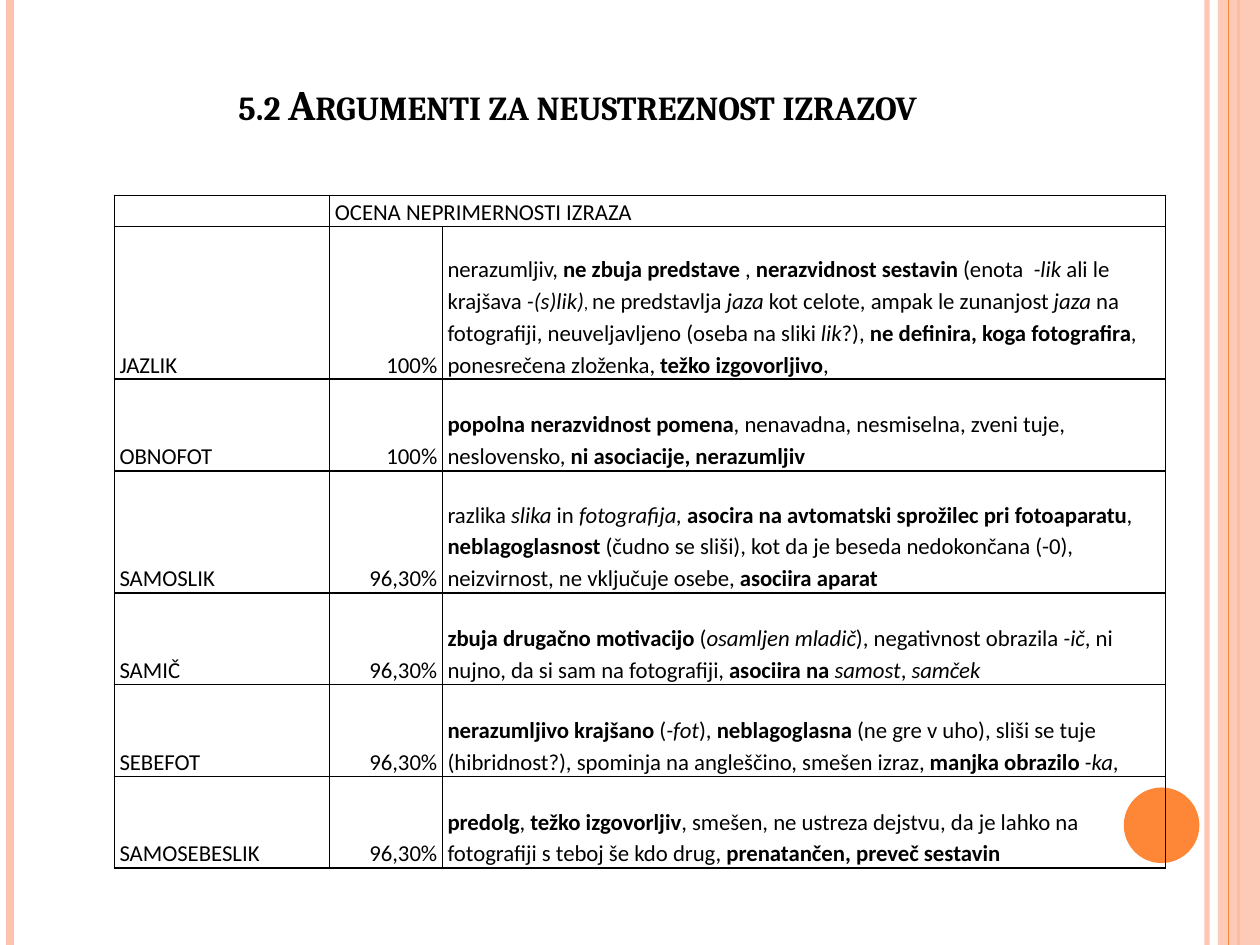
"""Build the slide on arguments against the coined terms."""
from dataclasses import dataclass

from lxml import etree
from pptx import Presentation
from pptx.dml.color import RGBColor
from pptx.enum.shapes import MSO_CONNECTOR, MSO_SHAPE
from pptx.enum.text import MSO_ANCHOR, PP_ALIGN
from pptx.oxml.ns import qn
from pptx.util import Pt

LINE = MSO_CONNECTOR.STRAIGHT
RECT, OVAL = MSO_SHAPE.RECTANGLE, MSO_SHAPE.OVAL
BOTTOM = MSO_ANCHOR.BOTTOM
LEFT, RIGHT, CENTER = PP_ALIGN.LEFT, PP_ALIGN.RIGHT, PP_ALIGN.CENTER
WIDE, HIGH = 720, 540
MARKS = "*_~"


@dataclass(frozen=True)
class Theme:
    ink: str = "000000"
    peach: str = "FEC3AE"
    orange: str = "FE8637"
    head: str = "Cambria"
    body: str = "Calibri"
    title: float = 24
    text: float = 13
    small: float = 10


@dataclass(frozen=True)
class Stripe:
    x: float
    color: str
    width: float
    alpha: int = 100


@dataclass(frozen=True)
class Blob:
    kind: int
    x: float
    y: float
    wide: float
    high: float
    color: str
    alpha: int = 100


@dataclass(frozen=True)
class Term:
    name: str
    share: str
    notes: str
    high: float


THEME = Theme()
STRIPES = (
    Stripe(689.8, THEME.peach, 3, 93),
    Stripe(5.8, THEME.peach, 4.5),
    Stripe(707.8, THEME.orange, 1.5),
)
BAND = Blob(RECT, 696, 0, 24, HIGH, THEME.peach, 87)
EDGE = Stripe(702, THEME.orange, 0.75)
DISC = Blob(OVAL, 642.2, 450, 43.2, 43.2, THEME.orange)
COLS = (123.1, 64.4, 413.3)
TOP = 17.5
TERMS = (
    Term("JAZLIK", "100%",
         "nerazumljiv, *ne zbuja predstave *, *nerazvidnost sestavin *(enota  _-lik_ ali le "
         "krajšava _-(s)lik)_~, ~ne predstavlja _jaza _kot celote, ampak le zunanjost _jaza_ na "
         "fotografiji, neuveljavljeno (oseba na sliki _lik_?), *ne definira, koga fotografira*, "
         "ponesrečena zloženka, *težko izgovorljivo*,", 87.1),
    Term("OBNOFOT", "100%",
         "*popolna nerazvidnost pomena*, nenavadna, nesmiselna, zveni tuje, neslovensko, "
         "*ni asociacije, nerazumljiv*", 52.4),
    Term("SAMOSLIK", "96,30%",
         "razlika _slika_ in _fotografija, _*asocira na avtomatski sprožilec pri fotoaparatu*, "
         "*neblagoglasnost* (čudno se sliši), kot da je beseda nedokončana (-0), neizvirnost, "
         "ne vključuje osebe, *asociira aparat*", 69.8),
    Term("SAMIČ", "96,30%",
         "*zbuja drugačno motivacijo *(_osamljen mladič_), negativnost obrazila _-ič_, ni nujno, "
         "da si sam na fotografiji, *asociira na *_samost_, _samček_", 52.4),
    Term("SEBEFOT", "96,30%",
         "*nerazumljivo krajšano *(_-fot_), *neblagoglasna* (ne gre v uho), sliši se tuje "
         "(hibridnost?), spominja na angleščino, smešen izraz, *manjka obrazilo *_-ka_,", 52.4),
    Term("SAMOSEBESLIK", "96,30%",
         "*predolg*, *težko izgovorljiv*, smešen, ne ustreza dejstvu, da je lahko na fotografiji "
         "s teboj še kdo drug, *prenatančen, preveč sestavin*", 52.4),
)


def fade(elem, alpha: int) -> None:
    """Set the opacity percent on the first colour in elem."""
    if alpha < 100:
        tint = next(elem.iter(qn("a:srgbClr")))
        etree.SubElement(tint, qn("a:alpha")).set("val", str(alpha * 1000))


def add_stripe(slide, item: Stripe) -> None:
    """Draw a full-height vertical line."""
    line = slide.shapes.add_connector(LINE, Pt(item.x), 0, Pt(item.x), Pt(HIGH))
    line.line.color.rgb = RGBColor.from_string(item.color)
    line.line.width = Pt(item.width)
    props = line._element.spPr
    fade(props, item.alpha)
    etree.SubElement(props, qn("a:effectLst"))


def add_blob(slide, item: Blob) -> None:
    """Draw a plain filled shape."""
    box = map(Pt, (item.x, item.y, item.wide, item.high))
    shape = slide.shapes.add_shape(item.kind, *box)
    shape.shadow.inherit = False
    shape.fill.solid()
    shape.fill.fore_color.rgb = RGBColor.from_string(item.color)
    shape.line.fill.background()
    fade(shape._element.spPr, item.alpha)


def set_font(font, face: str, size: float) -> None:
    """Give a font its face, size and ink."""
    font.name, font.size = face, Pt(size)
    font.color.rgb = RGBColor.from_string(THEME.ink)


def add_title(slide, text: str) -> None:
    """Write the heading in bold small capitals."""
    box = slide.shapes.add_textbox(Pt(36), Pt(21.6), Pt(588.2), Pt(55.4))
    frame = box.text_frame
    frame.word_wrap, frame.vertical_anchor = True, BOTTOM
    para = frame.paragraphs[0]
    para.alignment = CENTER
    set_font(para.font, THEME.head, THEME.title)
    para.font.bold = True
    run = para.add_run()
    run.text = text
    run._r.get_or_add_rPr().set("cap", "small")


def add_runs(para, text: str) -> None:
    """Add runs where * toggles bold, _ italic and ~ small type."""
    live, part = set(), ""
    for char in text + MARKS[0]:
        if char not in MARKS:
            part += char
            continue
        if part:
            run = para.add_run()
            run.text, part = part, ""
            if "*" in live:
                run.font.bold = True
            if "_" in live:
                run.font.italic = True
            if "~" in live:
                run.font.size = Pt(THEME.small)
        live ^= {char}


def fill_cell(cell, text: str, align: int = LEFT) -> None:
    """Format a cell with thin borders and write its text."""
    cell.fill.background()
    props = cell._tc.get_or_add_tcPr()
    for spot, side in enumerate("LRTB"):
        line = etree.Element(qn(f"a:ln{side}"), w=str(Pt(1)))
        paint = etree.SubElement(line, qn("a:solidFill"))
        etree.SubElement(paint, qn("a:srgbClr")).set("val", THEME.ink)
        props.insert(spot, line)
    cell.margin_left = cell.margin_right = Pt(3)
    cell.margin_top = cell.margin_bottom = 0
    cell.vertical_anchor = BOTTOM
    para = cell.text_frame.paragraphs[0]
    para.alignment, para.line_spacing = align, 1.15
    set_font(para.font, THEME.body, THEME.text)
    add_runs(para, text)


def add_grid(slide) -> None:
    """Build the table of terms, shares and arguments."""
    highs = [TOP, *(term.high for term in TERMS)]
    frame = slide.shapes.add_table(len(highs), len(COLS), Pt(65.3), Pt(111.6),
                                   Pt(sum(COLS)), Pt(sum(highs)))
    table = frame.table
    table.first_row = table.horz_banding = False
    for col, wide in zip(table.columns, COLS):
        col.width = Pt(wide)
    for row, high in zip(table.rows, highs):
        row.height = Pt(high)
    for col, text in enumerate(("", "OCENA NEPRIMERNOSTI IZRAZA", "")):
        fill_cell(table.cell(0, col), text)
    table.cell(0, 1).merge(table.cell(0, 2))
    for row, term in enumerate(TERMS, 1):
        fill_cell(table.cell(row, 0), term.name)
        fill_cell(table.cell(row, 1), term.share, RIGHT)
        fill_cell(table.cell(row, 2), term.notes)


def main() -> None:
    """Assemble and save the slide."""
    deck = Presentation()
    deck.slide_width, deck.slide_height = Pt(WIDE), Pt(HIGH)
    slide = deck.slides.add_slide(deck.slide_layouts[6])
    for item in STRIPES:
        add_stripe(slide, item)
    add_blob(slide, BAND)
    add_stripe(slide, EDGE)
    add_blob(slide, DISC)
    add_title(slide, "5.2 Argumenti za neustreznost izrazov")
    add_grid(slide)
    deck.save("out.pptx")


if __name__ == "__main__":
    main()
